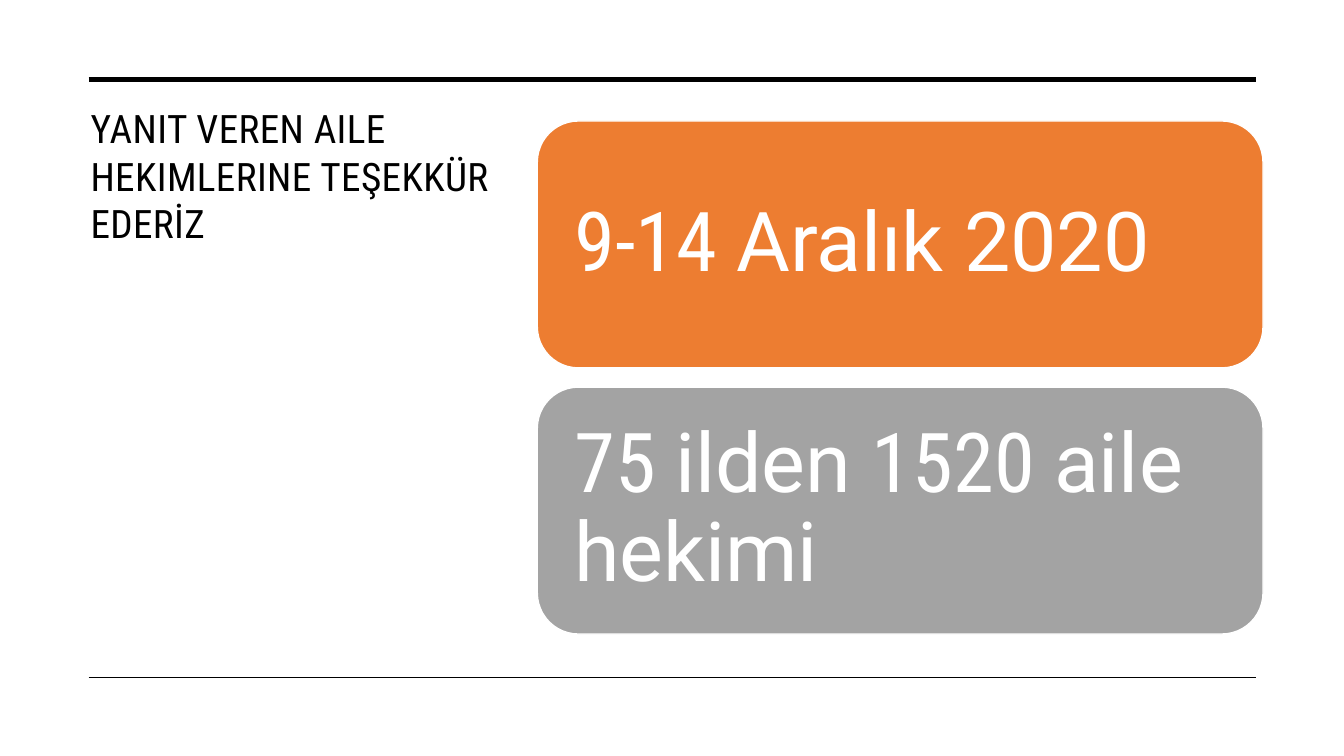
from pptx import Presentation
from pptx.dml.color import RGBColor
from pptx.enum.shapes import MSO_CONNECTOR as Connector, MSO_SHAPE as Shape
from pptx.enum.text import MSO_ANCHOR as Anchor, PP_ALIGN as Align
from pptx.oxml.ns import qn
from pptx.util import Pt
from lxml import etree

# Content
COLORS = {"ink": "000000", "paper": "FFFFFF", "orange": "ED7D31", "gray": "A3A3A3"}
CONDENSED, REGULAR = "Roboto Condensed", "Roboto"
TITLE = "YANIT VEREN AILE HEKIMLERINE TEŞEKKÜR EDERİZ"
CARDS = [
    ("orange", [("9-14 ", CONDENSED), ("Aralık 2020", REGULAR)]),
    ("gray", [("75\N{NO-BREAK SPACE}", CONDENSED), ("ilden ", REGULAR),
              ("1520 ", CONDENSED), ("aile hekimi", REGULAR)]),
]
RULES = [(56.9, 3.5), (483.8, 1)]  # height on the slide, line width

# Layout in points
RULE_LEFT, RULE_RIGHT = 63.4, 897.1
CARD_LEFT, CARD_TOP, CARD_WIDTH, CARD_HEIGHT = 383.8, 86.4, 518.4, 176.4
CARD_GAP = 13.7
CARD_INSET = 18


def color(name):
    return RGBColor.from_string(COLORS[name])


def add_rule(page, top, width):
    rule = page.shapes.add_connector(
        Connector.STRAIGHT, Pt(RULE_LEFT), Pt(top), Pt(RULE_RIGHT), Pt(top))
    rule.line.color.rgb = color("ink")
    rule.line.width = Pt(width)
    etree.SubElement(rule._element.spPr, qn("a:effectLst"))


def add_title(page):
    box = page.shapes.add_textbox(Pt(57.6), Pt(71.3), Pt(320.4), Pt(347))
    box.text_frame.word_wrap = True
    para = box.text_frame.paragraphs[0]
    span = para.add_run()
    span.text = TITLE
    para.font.name, para.font.size = CONDENSED, Pt(28)
    para.font.color.rgb = color("ink")
    span.font._element.set("spc", "30")


def add_card(page, top, fill, spans):
    card = page.shapes.add_shape(
        Shape.ROUNDED_RECTANGLE, Pt(CARD_LEFT), Pt(top), Pt(CARD_WIDTH), Pt(CARD_HEIGHT))
    card.shadow.inherit = False
    card.fill.solid()
    card.fill.fore_color.rgb = color(fill)
    card.line.color.rgb = color("paper")
    card.line.width = Pt(1)

    frame = card.text_frame
    frame.word_wrap = True
    frame.vertical_anchor = Anchor.MIDDLE
    frame.margin_left = frame.margin_right = Pt(CARD_INSET)
    frame.margin_top = frame.margin_bottom = Pt(CARD_INSET)
    para = frame.paragraphs[0]
    para.alignment = Align.LEFT
    para.line_spacing = 0.9
    para.font.size = Pt(59)
    para.font.color.rgb = color("paper")
    for text, font in spans:
        span = para.add_run()
        span.text = text
        span.font.name = font


def main():
    deck = Presentation()
    deck.slide_width, deck.slide_height = Pt(960), Pt(540)
    page = deck.slides.add_slide(deck.slide_layouts[6])

    # Title and the two rules
    add_title(page)
    for top, width in RULES:
        add_rule(page, top, width)

    # Stacked cards
    for index, (fill, spans) in enumerate(CARDS):
        add_card(page, CARD_TOP + index * (CARD_HEIGHT + CARD_GAP), fill, spans)

    deck.save("out.pptx")


if __name__ == "__main__":
    main()
